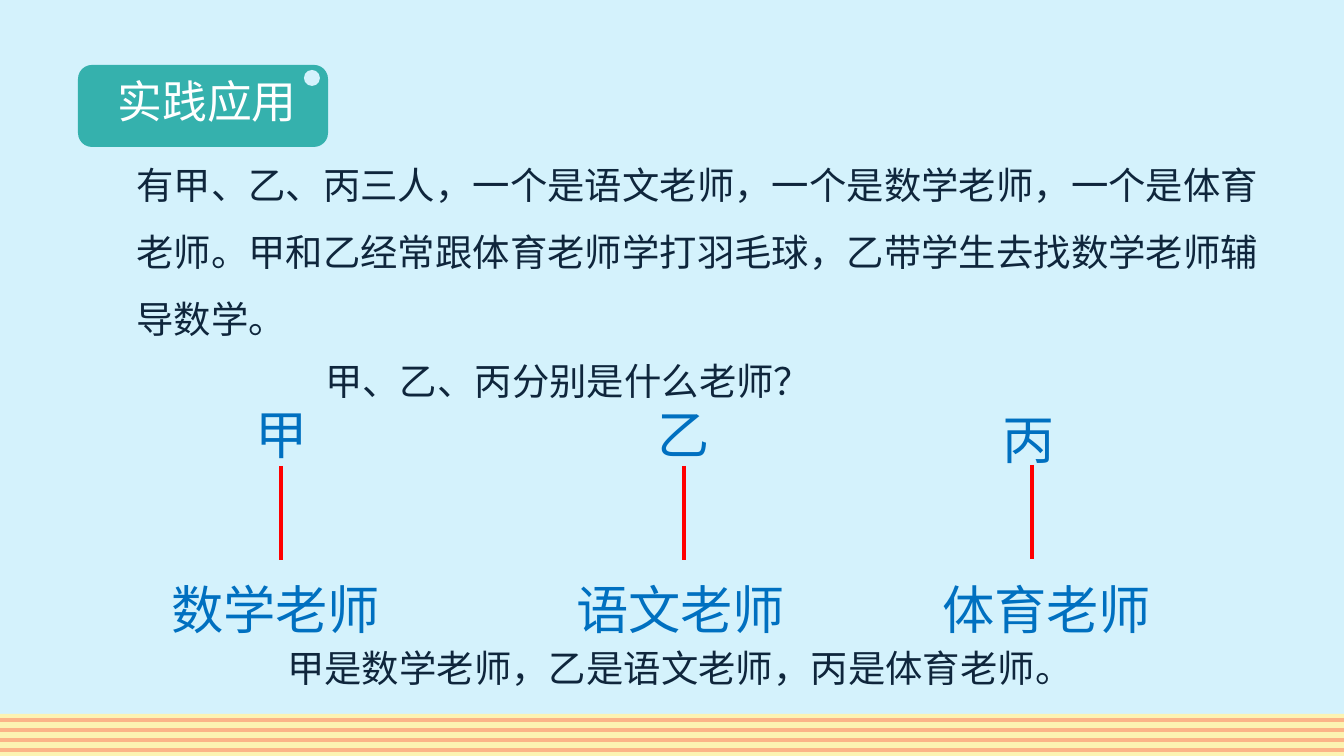
from lxml.etree import SubElement as Sub
from pptx import Presentation
from pptx.dml.color import RGBColor as Rgb
from pptx.enum.shapes import MSO_CONNECTOR as Conn, MSO_SHAPE as Kind
from pptx.enum.text import MSO_ANCHOR as Anchor, MSO_AUTO_SIZE as Auto, PP_ALIGN as Align
from pptx.oxml.ns import qn
from pptx.util import Emu, Pt

# Content
TITLE = "实践应用"
TEXTS = [  # text, left, top, width, height
    ("有甲、乙、丙三人，一个是语文老师，一个是数学老师，一个是体育老师。"
     "甲和乙经常跟体育老师学打羽毛球，乙带学生去找数学老师辅导数学。", 123, 133, 1152, 218),
    ("甲、乙、丙分别是什么老师？", 312, 329, 1100, 71),
]
ANSWER = "甲是数学老师，乙是语文老师，丙是体育老师。"
PAIRS = [  # person, left, top; job, left, width; line x, line top
    ("甲", 242, 364, "数学老师", 158, 276, 281, 466),
    ("乙", 644, 364, "语文老师", 563, 241, 684, 466),
    ("丙", 989, 369, "体育老师", 929, 253, 1032, 465),
]

# Style
HUES = {"sky": "D4F2FC", "sand": "FCF3B2", "stripe": "FBB488", "card": "35B1AD",
        "ink": "0F263C", "blue": "0070C0", "red": "FF0000", "white": "FFFFFF"}
FONT = "Noto Sans CJK SC"
WIDE, HIGH = 1344, 756
PX = 914400 / 134.4


def px(*nums):
    return [Emu(round(n * PX)) for n in nums]


def hue(name):
    return Rgb.from_string(HUES[name])


deck = Presentation()
deck.slide_width, deck.slide_height = px(WIDE, HIGH)
page = deck.slides.add_slide(deck.slide_layouts[5])
shapes = page.shapes


def block(kind, fill, *box):
    shape = shapes.add_shape(kind, *px(*box))
    shape.shadow.inherit = False
    shape.fill.solid()
    shape.fill.fore_color.rgb = hue(fill)
    shape.line.fill.background()
    return shape


def line(color, *ends):
    rule = shapes.add_connector(Conn.STRAIGHT, *px(*ends))
    rule.line.width = Pt(2.25)
    rule.line.color.rgb = hue(color)
    Sub(rule.element.spPr, qn("a:effectLst"))


def write(box, text, size, color, lead):
    frame = box.text_frame
    form = {"word_wrap": True, "auto_size": Auto.NONE, "vertical_anchor": Anchor.TOP}
    for key, val in form.items():
        setattr(frame, key, val)
    par = frame.paragraphs[0]
    form = {"alignment": Align.LEFT, "line_spacing": Pt(size * lead), "space_before": Pt(0)}
    for key, val in form.items():
        setattr(par, key, val)
    run = par.add_run()
    run.text = text
    for key, val in {"name": FONT, "size": Pt(size), "bold": False}.items():
        setattr(run.font, key, val)
    run.font.color.rgb = hue(color)
    Sub(run.font._element, qn("a:ea"), typeface=FONT)


def label(text, size, color, *box, lead=1.8):
    write(shapes.add_textbox(*px(*box)), text, size, color, lead)


# Backdrop with striped foot
block(Kind.RECTANGLE, "sky", 0, 0, WIDE, HIGH)
block(Kind.RECTANGLE, "sand", 0, 714, WIDE, HIGH - 714)
for i in range(4):
    y = 720 + 10 * i
    line("stripe", 0, y, WIDE, y)

# Title card
card = block(Kind.ROUNDED_RECTANGLE, "card", 78, 65, 250, 82)
card.adjustments[0] = 0.17
block(Kind.OVAL, "sky", 304, 70, 16, 16)
title = shapes.title
for key, val in zip(("left", "top", "width", "height"), px(104, 67, 212, 67)):
    setattr(title, key, val)
write(title, TITLE, 24, "white", 1.2)
card.element.getparent().append(title.element)  # bring to front

# Puzzle and question
for text, *box in TEXTS:
    label(text, 20, "ink", *box)

# Matched pairs
for name, left, top, job, start, width, x, y in PAIRS:
    label(name, 28, "blue", left, top, 173, 109)
    label(job, 28, "blue", start, 539, width, 109)
    line("red", x, y, x, y + 94)

# Answer
label(ANSWER, 20, "ink", 274, 639, 818, 59, lead=1.2)

deck.save("out.pptx")
